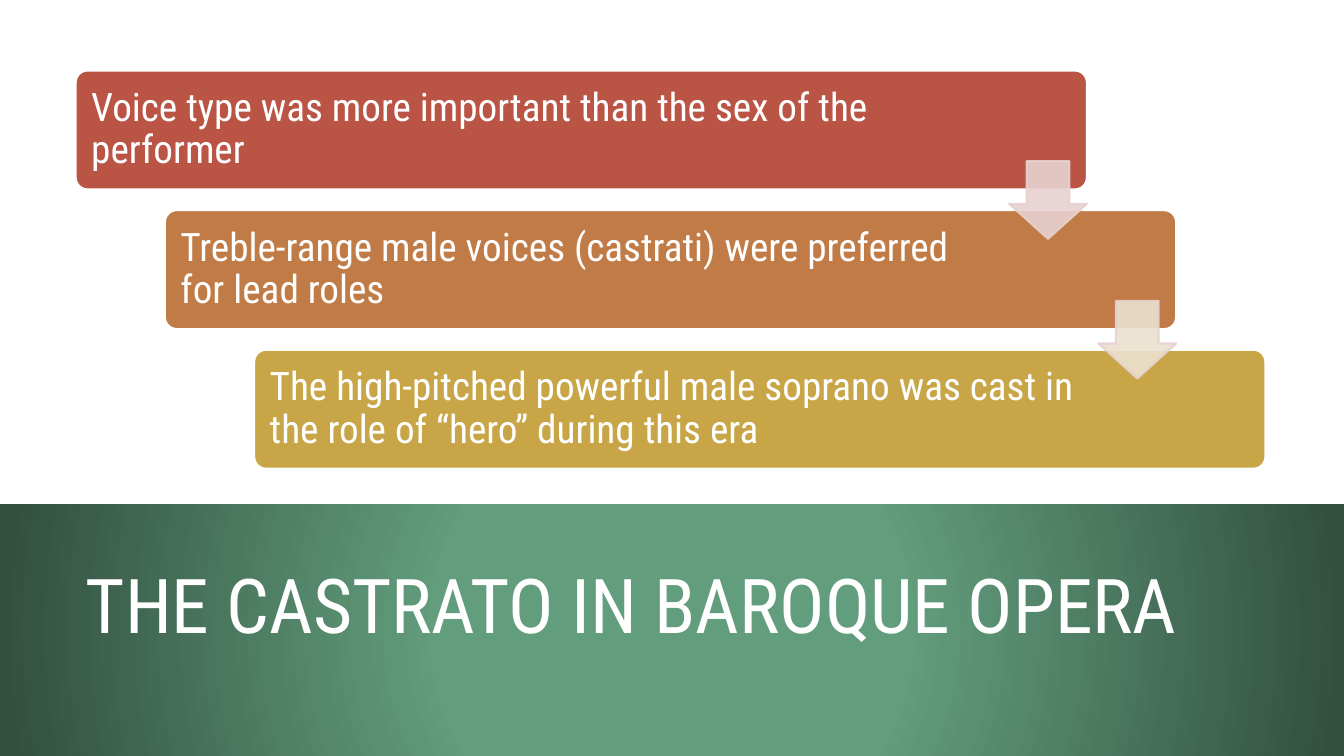
from lxml import etree
from pptx import Presentation, util as u
from pptx.dml.color import RGBColor
from pptx.enum import shapes, text
from pptx.oxml import ns, parse_xml

WHITE = RGBColor(0xFF, 0xFF, 0xFF)
RED = RGBColor(0xBA, 0x54, 0x45)
ORANGE = RGBColor(0xC1, 0x7B, 0x46)
GOLD = RGBColor(0xC8, 0xA5, 0x47)
PALE_RED = RGBColor(0xE7, 0xD1, 0xCF)
PALE_GOLD = RGBColor(0xEB, 0xE1, 0xCF)
GREEN = RGBColor(0x62, 0x9D, 0x7D)
DARK_GREEN = RGBColor(0x31, 0x4E, 0x3E)

# All positions and sizes are percentages of the slide's width and height.
STEP_X, STEP_Y = 6.64, 18.47
CARD = (5.63, 9.33, 75.24, 15.73)
ARROW = (75.09, 21.33, 5.78, 10.27)
BAND = (0, 66.67, 100, 33.33)
TITLE = (5.63, 72.13, 88.52, 16.8)

STATEMENTS = [
    ("Voice type was more important than the sex of the performer", RED),
    ("Treble-range male voices (castrati) were preferred for lead roles", ORANGE),
    ("The high-pitched powerful male soprano was cast in the role of “hero” during this era", GOLD),
]


class SlideBuilder:
    font = "Roboto Condensed"
    line_width = u.Pt(1.5)

    def __init__(self, deck):
        self.width, self.height = deck.slide_width, deck.slide_height
        self.page = deck.slides.add_slide(deck.slide_layouts.get_by_name("Title Only"))

    def place(self, area, step=0):
        """Turn percentages into lengths, moved along the staircase by step."""
        left, top, width, height = area
        return (
            u.Emu(int(self.width * (left + step * STEP_X) / 100)),
            u.Emu(int(self.height * (top + step * STEP_Y) / 100)),
            u.Emu(int(self.width * width / 100)),
            u.Emu(int(self.height * height / 100)),
        )

    def shape(self, kind, area, step=0):
        shape = self.page.shapes.add_shape(kind, *self.place(area, step))
        shape.shadow.inherit = False
        return shape

    def paint(self, shape, fill, line):
        shape.fill.solid()
        shape.fill.fore_color.rgb = fill
        shape.line.color.rgb = line
        shape.line.width = self.line_width

    def set_words(self, shape, words, size):
        frame = shape.text_frame
        frame.text = words
        frame.word_wrap = True
        frame.auto_size = text.MSO_AUTO_SIZE.NONE
        frame.vertical_anchor = text.MSO_ANCHOR.MIDDLE
        para = frame.paragraphs[0]
        para.alignment = text.PP_ALIGN.LEFT
        para.line_spacing = 0.9
        span = para.runs[0]
        span.font.name = self.font
        span.font.size = u.Pt(size)
        span.font.color.rgb = WHITE

    def band(self):
        band = self.shape(shapes.MSO_SHAPE.RECTANGLE, BAND)
        band.line.fill.background()
        gradient = parse_xml(
            f'<a:gradFill {ns.nsdecls("a")} rotWithShape="1"><a:gsLst>'
            f'<a:gs pos="34000"><a:srgbClr val="{GREEN}"/></a:gs>'
            f'<a:gs pos="100000"><a:srgbClr val="{DARK_GREEN}"/></a:gs></a:gsLst>'
            '<a:path path="circle"><a:fillToRect l="50000" t="50000" r="50000" b="50000"/>'
            '</a:path></a:gradFill>'
        )
        band._element.spPr.find(ns.qn("a:prstGeom")).addnext(gradient)

    def title(self, words):
        title = self.page.shapes.title
        title.left, title.top, title.width, title.height = self.place(TITLE)
        self.set_words(title, words, 54)
        # Bring the title in front of the band.
        self.page.shapes._spTree.append(title._element)

    def card(self, words, color, step):
        card = self.shape(shapes.MSO_SHAPE.ROUNDED_RECTANGLE, CARD, step)
        card.adjustments[0] = 0.1
        self.paint(card, color, WHITE)
        self.set_words(card, words, 28)
        frame = card.text_frame
        frame.margin_left = u.Inches(0.12)
        frame.margin_right = u.Inches(1.8)

    def arrow(self, color, step):
        arrow = self.shape(shapes.MSO_SHAPE.DOWN_ARROW, ARROW, step)
        arrow.adjustments[0] = 0.55
        arrow.adjustments[1] = 0.45
        self.paint(arrow, color, PALE_RED)
        for shade in arrow._element.spPr.iter(ns.qn("a:srgbClr")):
            etree.SubElement(shade, ns.qn("a:alpha"), val="90000")


def main():
    deck = Presentation()
    deck.slide_width, deck.slide_height = u.Inches(13.33), u.Inches(7.5)
    slide = SlideBuilder(deck)
    slide.band()
    slide.title("THE CASTRATO IN BAROQUE OPERA")
    for step, (words, color) in enumerate(STATEMENTS):
        slide.card(words, color, step)
    for step, color in enumerate((PALE_RED, PALE_GOLD)):
        slide.arrow(color, step)
    deck.save("out.pptx")


if __name__ == "__main__":
    main()
